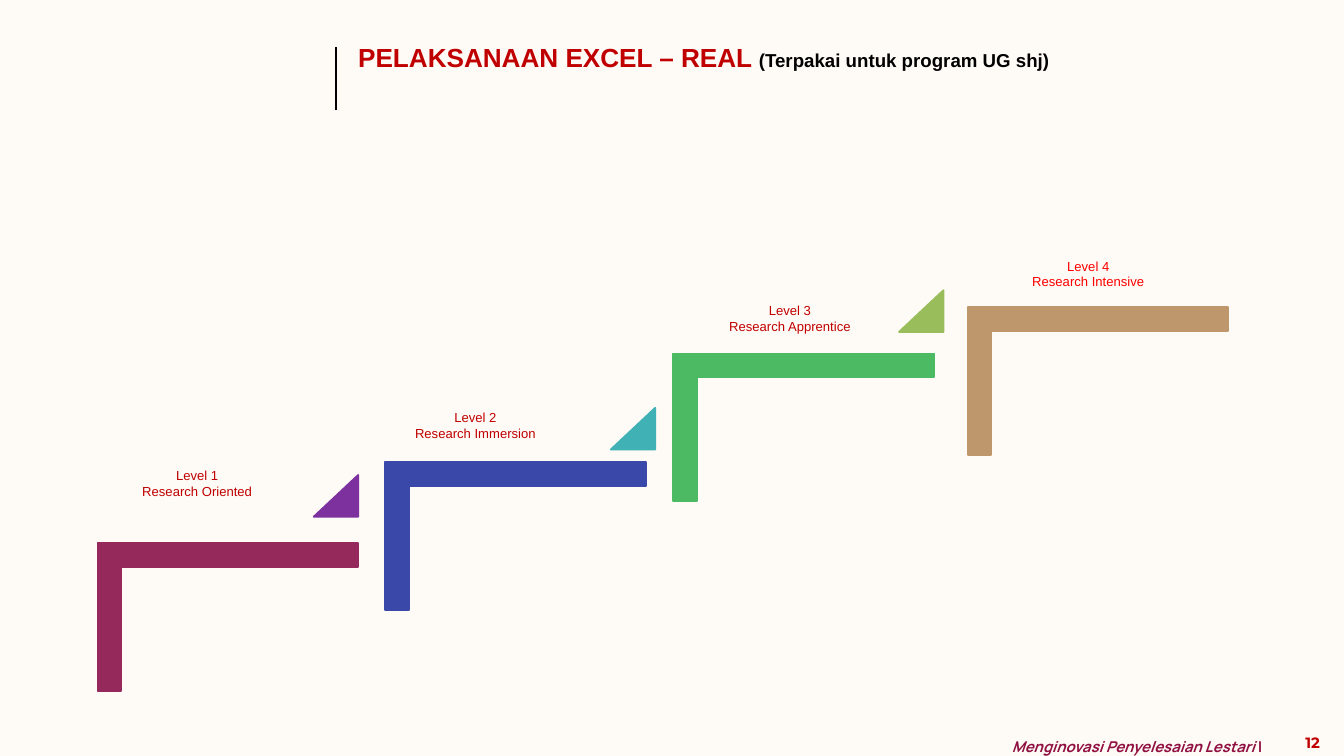
from dataclasses import dataclass
from typing import Any, Optional

import pptx
import pptx.dml.color
import pptx.enum.shapes
import pptx.enum.text
import pptx.oxml.ns
import pptx.util
from lxml import etree

SLIDE_WIDTH = pptx.util.Inches(20)
SLIDE_HEIGHT = pptx.util.Inches(11.25)
ALIGN = pptx.enum.text.PP_ALIGN
SHAPE = pptx.enum.shapes.MSO_SHAPE

COLOURS = {
    "background": "FEFAF5",
    "black": "000000",
    "red": "C00000",
    "bright red": "FF0000",
    "maroon": "901042",
    "plum": "95295C",
    "violet": "7D319F",
    "blue": "3948A9",
    "teal": "40B1B4",
    "green": "4CBA62",
    "lime": "99BD5B",
    "tan": "BE986C",
}


@dataclass
class Area:
    """Left, top, width and height as percentages of the slide."""

    left: float
    top: float
    width: float
    height: float

    def box(self) -> tuple[int, int, int, int]:
        return across(self.left), down(self.top), across(self.width), down(self.height)


@dataclass
class TextRun:
    text: str
    colour: str
    font: dict[str, Any]


@dataclass
class Level:
    lines: tuple[str, str]
    label: Area
    label_colour: str
    step_left: float
    step_top: float
    step_colour: str
    arrow: Optional[tuple[float, float, str]] = None


STEP_WIDTH, STEP_HEIGHT = 19.4, 19.56
ARROW_WIDTH, ARROW_HEIGHT = 3.3, 5.51
LABEL_FONT = {"name": "Arial", "size": pptx.util.Pt(14)}
TITLE_FONT = {"name": "Arial", "size": pptx.util.Pt(28), "bold": True}
SUBTITLE_FONT = {**TITLE_FONT, "size": pptx.util.Pt(20)}
NUMBER_FONT = {"name": "Montserrat", "size": pptx.util.Pt(16), "bold": True}
BAR_FONT = {"name": "Manrope", "size": pptx.util.Pt(16), "bold": True}
MOTTO_FONT = {**BAR_FONT, "italic": True}

LEVELS = [
    Level(("Level 1", "Research Oriented"), Area(8.6, 61.42, 12.15, 6.31), "red",
          7.25, 71.82, "plum", (23.35, 62.84, "violet")),
    Level(("Level 2", "Research Immersion"), Area(29.5, 53.78, 11.75, 6.31), "red",
          28.65, 61.16, "blue", (45.45, 53.96, "teal")),
    Level(("Level 3", "Research Apprentice"), Area(52.4, 39.56, 12.75, 6.31), "red",
          50.1, 46.76, "green", (66.9, 38.4, "lime")),
    Level(("Level 4", "Research Intensive"), Area(74.9, 33.69, 12.15, 5.07), "bright red",
          72, 40.62, "tan"),
]


def across(percent: float) -> int:
    return round(SLIDE_WIDTH * percent / 100)


def down(percent: float) -> int:
    return round(SLIDE_HEIGHT * percent / 100)


def colour(name: str) -> pptx.dml.color.RGBColor:
    return pptx.dml.color.RGBColor.from_string(COLOURS[name])


def set_attributes(target: Any, values: dict[str, Any]) -> None:
    for name, value in values.items():
        setattr(target, name, value)


def write_text(shape: Any, paragraphs: list[list[TextRun]], align: Any,
               margins: tuple[float, float], line_spacing: float = 1.0) -> None:
    side, end = (pptx.util.Inches(margin) for margin in margins)
    frame = shape.text_frame
    set_attributes(frame, {
        "word_wrap": True,
        "auto_size": pptx.enum.text.MSO_AUTO_SIZE.NONE,
        "vertical_anchor": pptx.enum.text.MSO_ANCHOR.TOP,
        "margin_left": side, "margin_right": side,
        "margin_top": end, "margin_bottom": end,
    })
    for index, runs in enumerate(paragraphs):
        paragraph = frame.add_paragraph() if index else frame.paragraphs[0]
        set_attributes(paragraph, {"alignment": align, "line_spacing": line_spacing})
        for text_run in runs:
            run = paragraph.add_run()
            run.text = text_run.text
            set_attributes(run.font, text_run.font)
            run.font.color.rgb = colour(text_run.colour)


def add_text(slide: Any, area: Area, paragraphs: list[list[TextRun]], align: Any,
             margins: tuple[float, float] = (0.1, 0.05), line_spacing: float = 1.0) -> None:
    write_text(slide.shapes.add_textbox(*area.box()), paragraphs, align, margins, line_spacing)


def add_block(slide: Any, kind: Any, box: tuple[int, int, int, int], name: str) -> Any:
    shape = slide.shapes.add_shape(kind, *box)
    shape.shadow.inherit = False
    shape.fill.solid()
    shape.fill.fore_color.rgb = colour(name)
    shape.line.color.rgb = colour(name)
    shape.line.width = pptx.util.Pt(2)
    return shape


def add_level(slide: Any, level: Level) -> None:
    left, top, width, height = Area(level.step_left, level.step_top, STEP_WIDTH, STEP_HEIGHT).box()
    shift = (width - height) // 2
    step = add_block(slide, SHAPE.from_xml("corner"), (left + shift, top - shift, height, width),
                     level.step_colour)
    step.rotation = 90
    for index in range(2):
        step.adjustments[index] = 0.16
    if level.arrow:
        arrow_left, arrow_top, arrow_colour = level.arrow
        arrow_area = Area(arrow_left, arrow_top, ARROW_WIDTH, ARROW_HEIGHT)
        arrow = add_block(slide, SHAPE.ISOSCELES_TRIANGLE, arrow_area.box(), arrow_colour)
        arrow.adjustments[0] = 1
    paragraphs = [[TextRun(line, level.label_colour, LABEL_FONT)] for line in level.lines]
    add_text(slide, level.label, paragraphs, ALIGN.CENTER)


def add_title(slide: Any) -> None:
    title = slide.shapes.title
    left, top, width, height = Area(25.9, 4.89, 74.1, 5.51).box()
    set_attributes(title, {"left": left, "top": top, "width": width, "height": height})
    runs = [TextRun("PELAKSANAAN EXCEL – REAL ", "red", TITLE_FONT),
            TextRun("(Terpakai untuk program UG shj)", "black", SUBTITLE_FONT)]
    write_text(title, [runs], ALIGN.LEFT, (0.15, 0.07))
    rule = slide.shapes.add_connector(pptx.enum.shapes.MSO_CONNECTOR.STRAIGHT,
                                      across(25), down(14.58), across(25), down(6.22))
    rule.line.color.rgb = colour("black")
    rule.line.width = pptx.util.Pt(3)
    etree.SubElement(rule._element.spPr, pptx.oxml.ns.qn("a:effectLst"))


def add_footer(slide: Any) -> None:
    motto = [TextRun("Menginovasi Penyelesaian Lestari ", "maroon", MOTTO_FONT),
             TextRun("|", "maroon", BAR_FONT)]
    add_text(slide, Area(75.3, 96.62, 21, 3.38), [motto], ALIGN.LEFT, (0, 0), 1.4)
    add_text(slide, Area(95.35, 96.62, 4.65, 3.29),
             [[TextRun("12", "red", NUMBER_FONT)]], ALIGN.CENTER)


def main() -> None:
    presentation = pptx.Presentation()
    presentation.slide_width = SLIDE_WIDTH
    presentation.slide_height = SLIDE_HEIGHT
    slide = presentation.slides.add_slide(presentation.slide_layouts.get_by_name("Title Only"))
    slide.background.fill.solid()
    slide.background.fill.fore_color.rgb = colour("background")
    add_title(slide)
    for level in LEVELS:
        add_level(slide, level)
    add_footer(slide)
    presentation.save("out.pptx")


if __name__ == "__main__":
    main()
